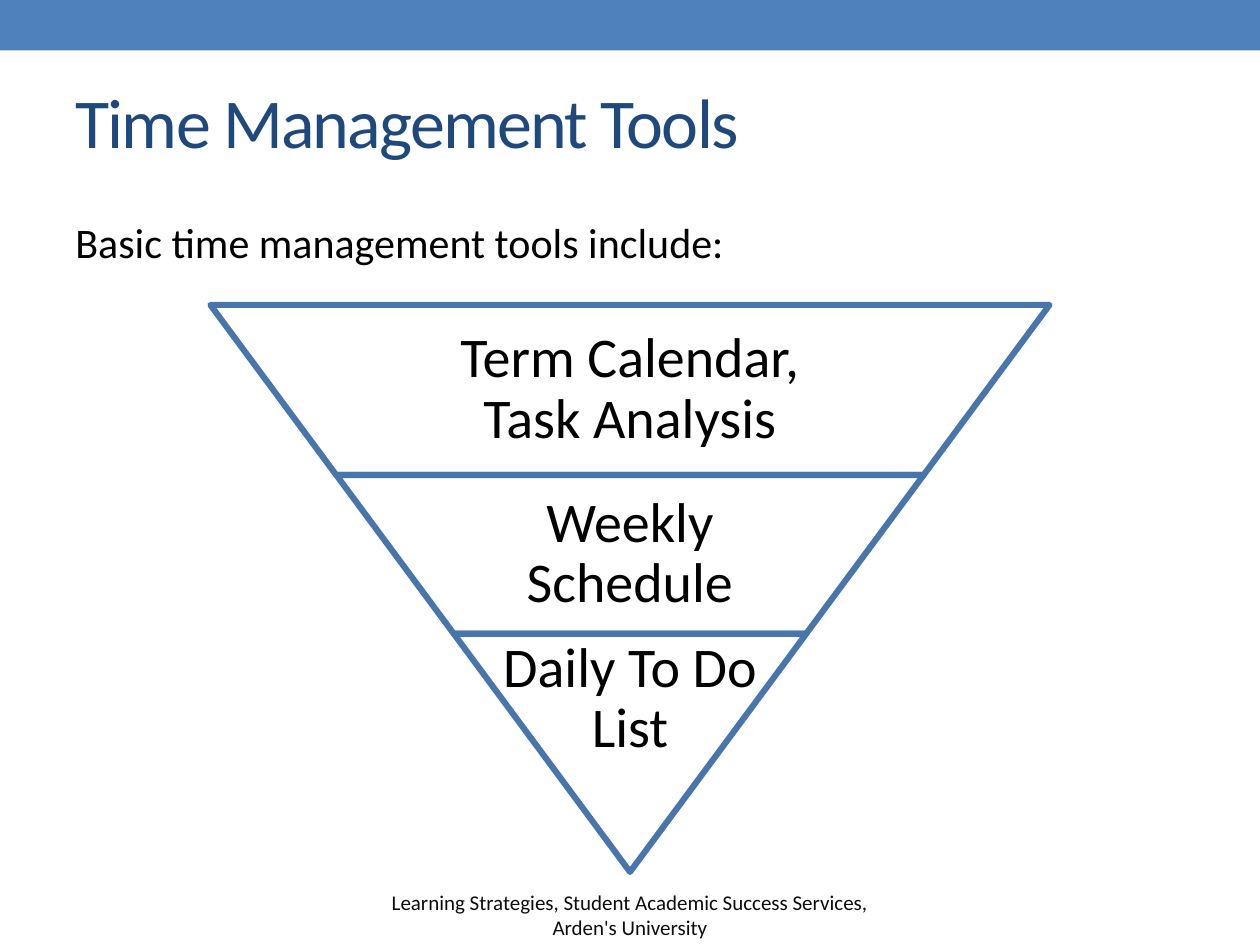
"""Build the time management tools slide with its inverted triangle."""
from lxml.etree import SubElement
from pptx import Presentation
from pptx.dml.color import RGBColor
from pptx.enum.shapes import MSO_SHAPE
from pptx.enum.text import MSO_ANCHOR, PP_ALIGN
from pptx.oxml.ns import qn
from pptx.util import Inches, Pt

BAR_BLUE = RGBColor(0x4F, 0x81, 0xBD)
TITLE_BLUE = RGBColor(0x1F, 0x49, 0x7D)
LINE_BLUE = RGBColor(0x48, 0x75, 0xAC)
WHITE = RGBColor(0xFF, 0xFF, 0xFF)
BLACK = RGBColor(0, 0, 0)
FOOTER_GREY = RGBColor(0x0D, 0x0D, 0x0D)

FONT = "Calibri"
TITLE = "Time Management Tools"
INTRO = "Basic time management tools include:"
FOOTER = "Learning Strategies, Student Academic Success Services, Arden's University"
TIERS = [
    ("Term Calendar,\nTask Analysis", 2.42, 3.77, 1.21, MSO_ANCHOR.MIDDLE),
    ("Weekly Schedule", 3.77, 5.03, 0.86, MSO_ANCHOR.MIDDLE),
    ("Daily To Do\nList", 5.03, 6.92, 0.04, MSO_ANCHOR.TOP),
]
CENTER, TOP, TIP, HALF_WIDTH = 5, 2.42, 6.92, 3.33


def write(shape, text, size, color, anchor, align=PP_ALIGN.LEFT):
    frame = shape.text_frame
    frame.word_wrap = True
    frame.vertical_anchor = anchor
    para = frame.paragraphs[0]
    para.text = text
    para.alignment = align
    for span in para.runs:
        span.font.name = FONT
        span.font.size = Pt(size)
        span.font.color.rgb = color
    return para


def add_text(slide, place, *style):
    box = slide.shapes.add_textbox(*map(Inches, place))
    return write(box, *style)


def half_width_at(y):
    return HALF_WIDTH * (TIP - y) / (TIP - TOP)


def add_tier(slide, text, top, bottom, side_inset, anchor):
    upper, lower = half_width_at(top), half_width_at(bottom)
    corners = [(CENTER + upper, top), (CENTER + lower, bottom),
               (CENTER - lower, bottom), (CENTER - upper, top)]
    points = [(Inches(x), Inches(y)) for x, y in corners]
    builder = slide.shapes.build_freeform(*points[0])
    builder.add_line_segments(points[1:], close=True)
    tier = builder.convert_to_shape()
    tier.shadow.inherit = False
    tier.fill.solid()
    tier.fill.fore_color.rgb = WHITE
    tier.line.color.rgb = LINE_BLUE
    tier.line.width = Pt(3.5)
    SubElement(tier.line._get_or_add_ln(), qn("a:round"))
    frame = tier.text_frame
    frame.margin_left = frame.margin_right = Inches(side_inset)
    frame.margin_top = frame.margin_bottom = Inches(0.04)
    para = write(tier, text, 32, BLACK, anchor, PP_ALIGN.CENTER)
    para.line_spacing = 0.9


def main():
    deck = Presentation()
    deck.slide_width, deck.slide_height = Inches(10), Inches(7.5)
    slide = deck.slides.add_slide(deck.slide_layouts[6])

    bar = slide.shapes.add_shape(MSO_SHAPE.RECTANGLE, 0, 0, deck.slide_width, Inches(0.4))
    bar.shadow.inherit = False
    bar.fill.solid()
    bar.fill.fore_color.rgb = BAR_BLUE
    bar.line.fill.background()

    title = add_text(slide, (0.5, 0.42, 9, 1.08), TITLE, 40, TITLE_BLUE, MSO_ANCHOR.MIDDLE)
    title.runs[0].font._element.set("spc", "-100")
    add_text(slide, (0.5, 1.67, 9, 0.5), INTRO, 24, BLACK, MSO_ANCHOR.TOP)
    for tier in TIERS:
        add_tier(slide, *tier)
    add_text(slide, (2.75, 7.08, 4.5, 0.36), FOOTER, 12, FOOTER_GREY,
             MSO_ANCHOR.MIDDLE, PP_ALIGN.CENTER)
    deck.save("out.pptx")


if __name__ == "__main__":
    main()
